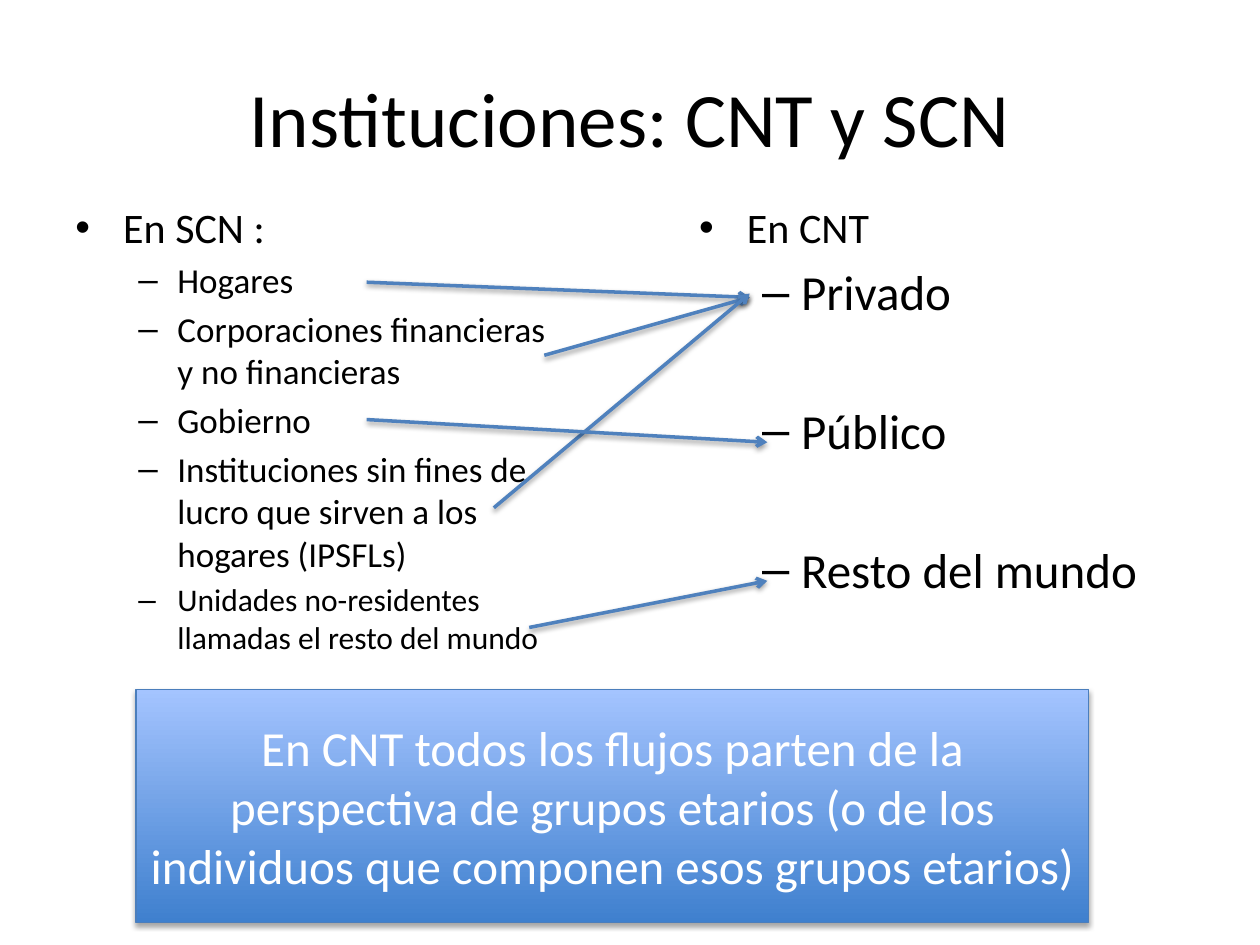
from lxml import etree
from pptx import Presentation
from pptx.dml.color import RGBColor
from pptx.enum.shapes import MSO_CONNECTOR, MSO_SHAPE
from pptx.enum.text import MSO_ANCHOR, PP_ALIGN
from pptx.oxml.ns import qn
from pptx.util import Inches, Pt

STRAIGHT = MSO_CONNECTOR.STRAIGHT
RECTANGLE = MSO_SHAPE.RECTANGLE
MIDDLE = MSO_ANCHOR.MIDDLE
CENTER = PP_ALIGN.CENTER

FONT = "Calibri"
BLACK = RGBColor(0x00, 0x00, 0x00)
WHITE = RGBColor(0xFF, 0xFF, 0xFF)
ARROW_BLUE = RGBColor(0x4F, 0x81, 0xBD)
BORDER_BLUE = RGBColor(0x4B, 0x7E, 0xBC)
GRADIENT_BLUES = (RGBColor(0x3F, 0x80, 0xCE), RGBColor(0xA4, 0xC4, 0xFF))

TITLE_ONLY = 5
# Bullet character, left margin and hanging indent in inches
BULLETS = (("•", 0.38, 0.38), ("–", 0.81, 0.31))
SPACING_SHARE = 0.2
BLANK_LINE = 40  # points that part the groups in the CNT list

# Level, text, size, extra space before
SCN_ITEMS = (
    (0, "En SCN :", 24, 0),
    (1, "Hogares", 20, 0),
    (1, "Corporaciones financieras y no financieras", 20, 0),
    (1, "Gobierno", 20, 0),
    (1, "Instituciones sin fines de lucro que sirven a los hogares (IPSFLs)", 20, 0),
    (1, "Unidades no-residentes llamadas el resto del mundo", 18, 0),
)
CNT_ITEMS = (
    (0, "En CNT", 24, 0),
    (1, "Privado", 28, 0),
    (1, "Público", 28, BLANK_LINE),
    (1, "Resto del mundo", 28, BLANK_LINE),
)
ARROWS = (
    ((2.91, 2.24), (5.95, 2.36)),
    ((4.32, 2.82), (5.95, 2.36)),
    ((3.92, 4.03), (5.95, 2.33)),
    ((4.2, 4.98), (6.09, 4.61)),
    ((2.91, 3.33), (6.09, 3.51)),
)


def place(shape, box):
    shape.left, shape.top, shape.width, shape.height = map(Inches, box)


def add_run(paragraph, text, size, color):
    run = paragraph.add_run()
    run.text = text
    run.font.name = FONT
    run.font.size = Pt(size)
    run.font.color.rgb = color


def add_shadow(shape, distance, opacity):
    """Give the shape a soft black shadow that falls straight down."""
    properties = shape._element.spPr
    for old in properties.findall(qn("a:effectLst")):
        properties.remove(old)
    effects = etree.SubElement(properties, qn("a:effectLst"))
    shadow = etree.SubElement(
        effects, qn("a:outerShdw"), blurRad=str(Pt(3.1)),
        dist=str(Pt(distance)), dir="5400000", rotWithShape="0")
    color = etree.SubElement(shadow, qn("a:srgbClr"), val="000000")
    etree.SubElement(color, qn("a:alpha"), val=str(opacity * 1000))


def add_bullet(paragraph, level):
    character, margin, hanging = BULLETS[level]
    properties = paragraph._p.get_or_add_pPr()
    properties.set("marL", str(Inches(margin)))
    properties.set("indent", str(-Inches(hanging)))
    etree.SubElement(properties, qn("a:buFont"), typeface="Arial")
    etree.SubElement(properties, qn("a:buChar"), char=character)
    paragraph.level = level


def add_title(slide, box, text):
    title = slide.shapes.title
    place(title, box)
    title.text_frame.vertical_anchor = MIDDLE
    paragraph = title.text_frame.paragraphs[0]
    paragraph.alignment = CENTER
    add_run(paragraph, text, 44, BLACK)


def add_list(slide, box, items):
    frame = slide.shapes.add_textbox(*map(Inches, box)).text_frame
    frame.word_wrap = True
    for index, (level, text, size, extra) in enumerate(items):
        paragraph = frame.add_paragraph() if index else frame.paragraphs[0]
        add_bullet(paragraph, level)
        if index:
            paragraph.space_before = Pt(size * SPACING_SHARE + extra)
        add_run(paragraph, text, size, BLACK)


def add_arrow(slide, start, end):
    arrow = slide.shapes.add_connector(STRAIGHT, *map(Inches, start + end))
    arrow.line.color.rgb = ARROW_BLUE
    arrow.line.width = Pt(2)
    etree.SubElement(arrow.line._get_or_add_ln(), qn("a:tailEnd"), type="arrow")
    add_shadow(arrow, 1.6, 38)


def add_conclusion(slide, box, text):
    panel = slide.shapes.add_shape(RECTANGLE, *map(Inches, box))
    panel.fill.gradient()
    panel.fill.gradient_angle = 90
    for position, (stop, color) in enumerate(
            zip(panel.fill.gradient_stops, GRADIENT_BLUES)):
        stop.color.rgb = color
        stop.position = position
    panel.line.color.rgb = BORDER_BLUE
    panel.line.width = Pt(0.75)
    add_shadow(panel, 1.8, 35)
    frame = panel.text_frame
    frame.word_wrap = True
    frame.vertical_anchor = MIDDLE
    frame.paragraphs[0].alignment = CENTER
    add_run(frame.paragraphs[0], text, 28, WHITE)


def main():
    presentation = Presentation()
    presentation.slide_width = Inches(10)
    presentation.slide_height = Inches(7.5)
    slide = presentation.slides.add_slide(presentation.slide_layouts[TITLE_ONLY])
    add_title(slide, (0.5, 0.3, 9, 1.25), "Instituciones: CNT y SCN")
    add_list(slide, (0.5, 1.55, 4.06, 5.15), SCN_ITEMS)
    add_list(slide, (5.45, 1.55, 3.79, 3.92), CNT_ITEMS)
    for start, end in ARROWS:
        add_arrow(slide, start, end)
    add_conclusion(
        slide, (1.08, 5.47, 7.56, 1.85),
        "En CNT todos los flujos parten de la perspectiva de grupos etarios "
        "(o de los individuos que componen esos grupos etarios)")
    presentation.save("out.pptx")


if __name__ == "__main__":
    main()
